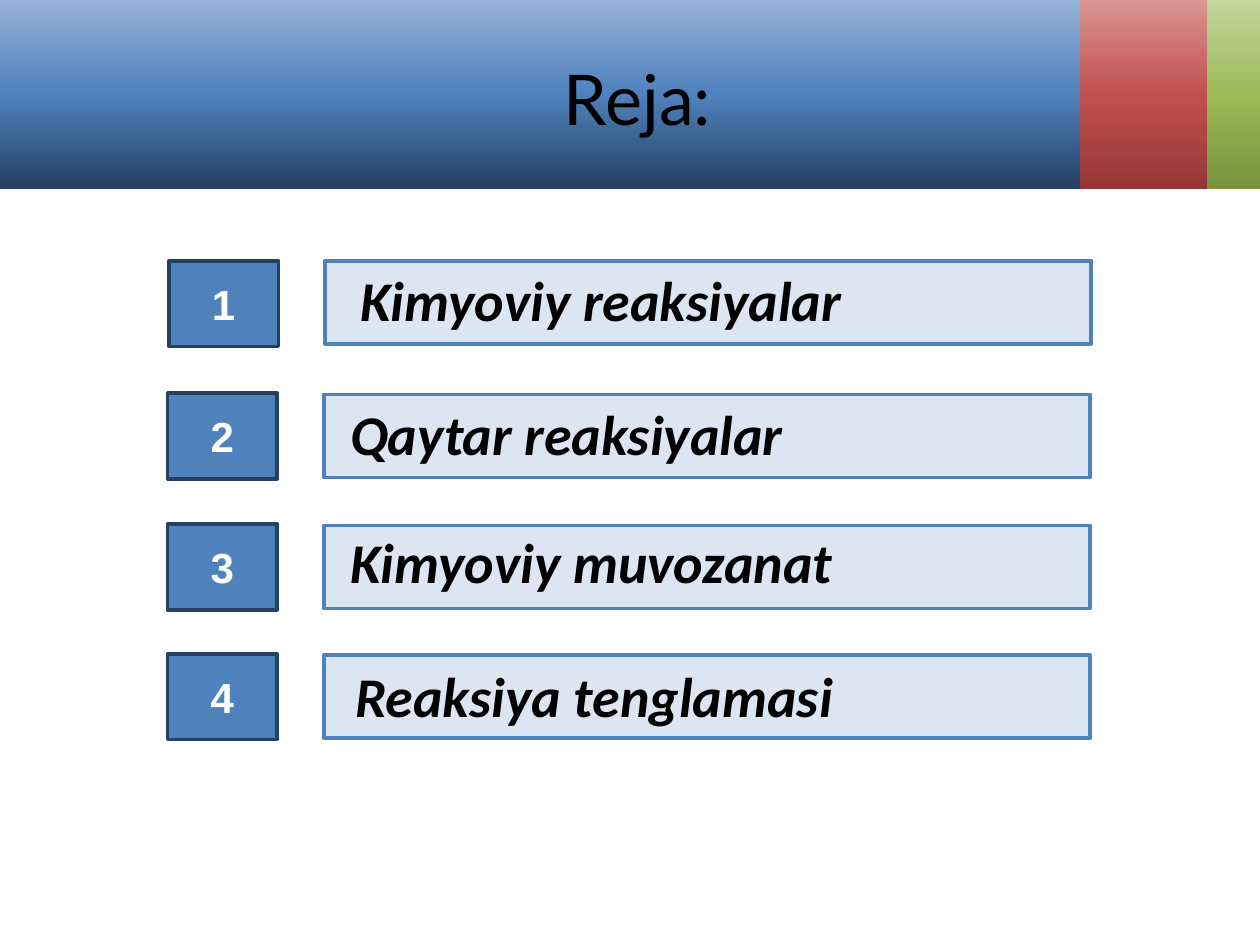
from copy import deepcopy

from pptx import Presentation
from pptx.dml.color import RGBColor
from pptx.enum.shapes import MSO_SHAPE
from pptx.enum.text import MSO_ANCHOR, MSO_AUTO_SIZE, PP_ALIGN
from pptx.util import Inches, Pt

TITLE = "Reja:"
BANDS = [
    (9.43, 0.58, ("77933C", "9BBB59", "C3D69B")),
    (8.53, 1.05, ("953735", "C0504D", "D99694")),
    (0, 8.57, ("254061", "4F81BD", "95B3D7")),
]
ITEMS = [
    ("Kimyoviy reaksiyalar", 1.34, 2.07, 2.07, 2.76, 2.06, 4.84),
    ("Qaytar reaksiyalar", 1.33, 3.12, 3.13, 2.68, 3.12, 5),
    ("Kimyoviy muvozanat", 1.33, 4.16, 4.17, 2.68, 4.14, 5),
    ("Reaksiya tenglamasi", 1.33, 5.19, 5.2, 2.72, 5.2, 4.92),
]
BAR_OFFSET = 1.24


def rgb(value):
    return RGBColor.from_string(value)


def add_rect(s, *box):
    sp = s.shapes.add_shape(MSO_SHAPE.RECTANGLE, *map(Inches, box))
    sp.shadow.inherit = False
    return sp


def add_band(s, left, width, colors):
    sp = add_rect(s, left, 0, width, 1.5)
    sp.line.fill.background()
    sp.fill.gradient()
    sp.fill.gradient_angle = 90
    stops = sp.fill._fill._gradFill.gsLst
    stops.append(deepcopy(stops[0]))
    for i, (stop, color) in enumerate(zip(sp.fill.gradient_stops, colors)):
        stop.position = i / 2
        stop.color.rgb = rgb(color)


def add_box(s, box, fill, line):
    sp = add_rect(s, *box)
    sp.fill.solid()
    sp.fill.fore_color.rgb = rgb(fill)
    sp.line.color.rgb = rgb(line)
    sp.line.width = Pt(2)
    return sp


def write(tf, text, size, font, color, align, bold=False, italic=False):
    p = tf.paragraphs[0]
    p.text = text
    p.alignment = align
    p.font.size = Pt(size)
    p.font.name = font
    p.font.bold = bold
    p.font.italic = italic
    p.font.color.rgb = rgb(color)


def add_item(s, number, text, left, top, bar_top, text_left, text_top, text_width):
    add_box(s, (left + BAR_OFFSET, bar_top, 6.08, 0.66), "DCE6F2", "4F81BD")
    sp = add_box(s, (left, top, 0.87, 0.68), "4F81BD", "254061")
    sp.text_frame.vertical_anchor = MSO_ANCHOR.MIDDLE
    write(sp.text_frame, str(number), 24, "Arial", "FFFFFF", PP_ALIGN.CENTER, bold=True)
    label = s.shapes.add_textbox(*map(Inches, (text_left, text_top, text_width, 0.64)))
    tf = label.text_frame
    tf.word_wrap = True
    tf.auto_size = MSO_AUTO_SIZE.SHAPE_TO_FIT_TEXT
    write(tf, text, 32, "Calibri", "000000", PP_ALIGN.LEFT, bold=True, italic=True)


def main():
    prs = Presentation()
    prs.slide_width, prs.slide_height = Inches(10), Inches(7.5)
    s = prs.slides.add_slide(prs.slide_layouts[5])
    for band in BANDS:
        add_band(s, *band)

    title = s.shapes.title
    title.left, title.top, title.width, title.height = map(Inches, (1.77, 0.11, 6.58, 1.33))
    title.text_frame.vertical_anchor = MSO_ANCHOR.MIDDLE
    write(title.text_frame, TITLE, 40, "Lato", "000000", PP_ALIGN.CENTER)
    s.shapes._spTree.append(title._element)

    for number, item in enumerate(ITEMS, 1):
        add_item(s, number, *item)
    prs.save("out.pptx")


if __name__ == "__main__":
    main()
